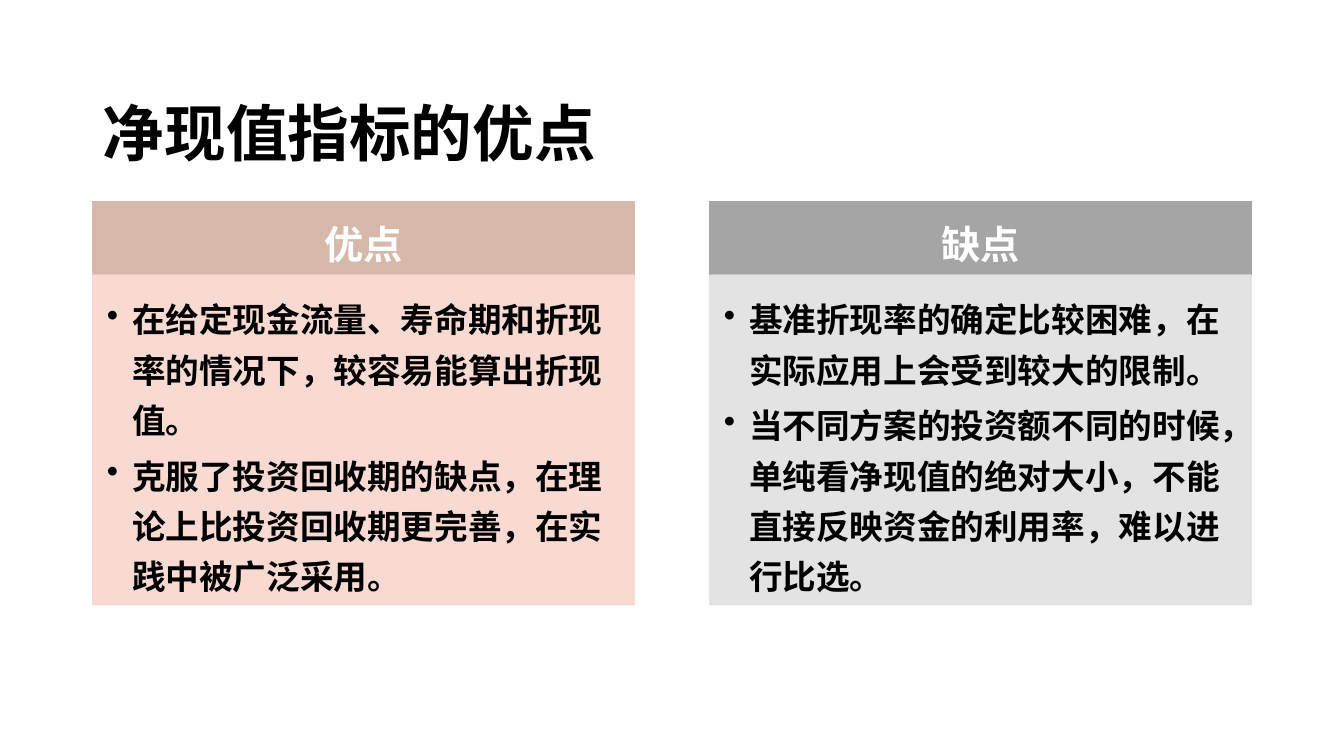
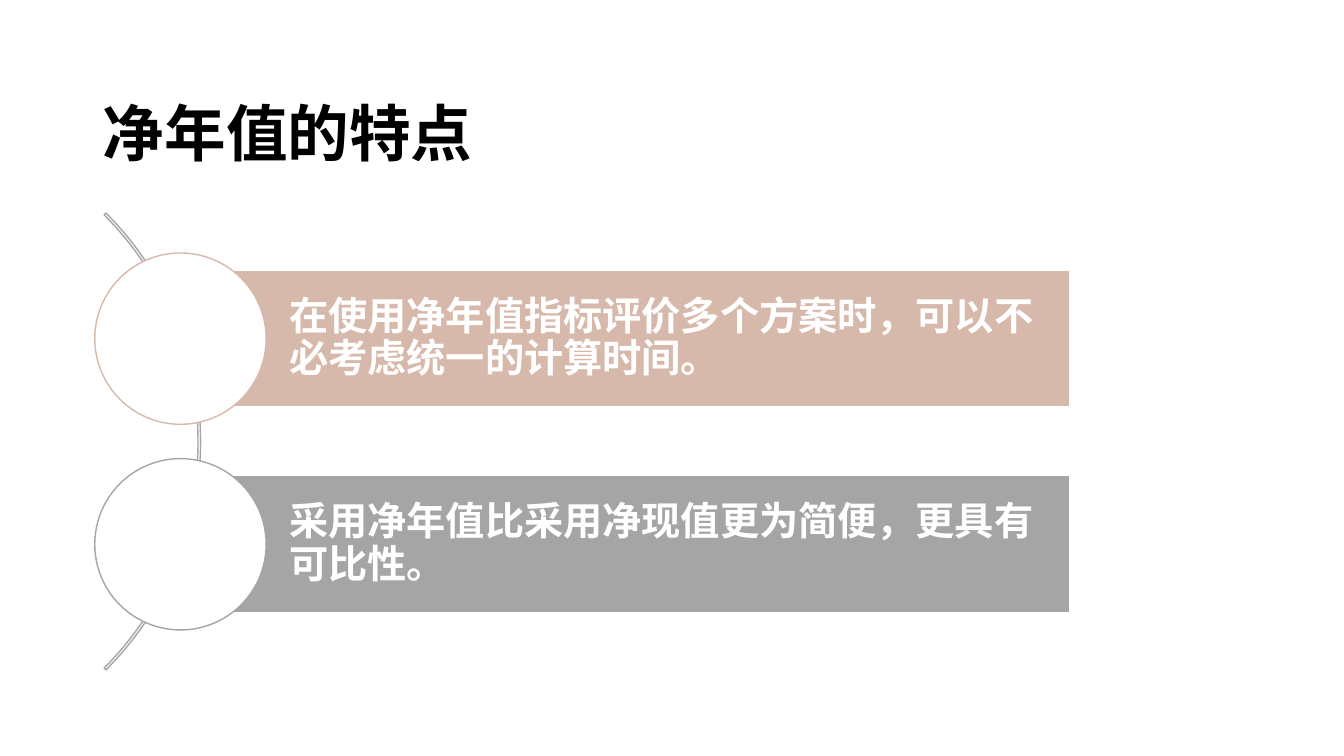
from dataclasses import dataclass

from lxml import etree
from pptx import Presentation
from pptx.dml.color import RGBColor
from pptx.enum.shapes import MSO_SHAPE
from pptx.enum.text import MSO_ANCHOR, MSO_AUTO_SIZE, PP_ALIGN
from pptx.oxml.ns import qn
from pptx.presentation import Presentation as Deck
from pptx.shapes.autoshape import Shape
from pptx.slide import Slide
from pptx.text.text import TextFrame
from pptx.util import Inches, Pt

RECTANGLE, OVAL, ARC = MSO_SHAPE.RECTANGLE, MSO_SHAPE.OVAL, MSO_SHAPE.BLOCK_ARC
TOP, MIDDLE = MSO_ANCHOR.TOP, MSO_ANCHOR.MIDDLE
LEFT, CENTER, JUSTIFY = PP_ALIGN.LEFT, PP_ALIGN.CENTER, PP_ALIGN.JUSTIFY

# Shared style
FONT = "Times New Roman"
BLACK = RGBColor(0x00, 0x00, 0x00)
WHITE = RGBColor(0xFF, 0xFF, 0xFF)
ROSE = RGBColor(0xD7, 0xB9, 0xAB)
PALE_ROSE = RGBColor(0xF8, 0xD7, 0xCE)
GRAY = RGBColor(0xA5, 0xA5, 0xA5)
PALE_GRAY = RGBColor(0xE1, 0xE1, 0xE1)

# Grid in inches: two columns on the comparison, two rows on the list
SLIDE_WIDTH, SLIDE_HEIGHT = 13.33, 7.5
MARGIN = 0.92
TITLE_AREA = (MARGIN, 0.4, SLIDE_WIDTH - 2 * MARGIN, 1.45)
COLUMN_WIDTH, GUTTER = 5.37, 0.75
COLUMN_TOP, HEADER_HEIGHT, BODY_HEIGHT = 2.0, 0.73, 3.27
BAR_LEFT, BAR_WIDTH, BAR_HEIGHT = 1.79, 8.82, 1.36
FIRST_ROW_CENTER, ROW_PITCH = 3.36, 1.5 * BAR_HEIGHT
CIRCLE_SIZE = 1.25 * BAR_HEIGHT
ARC_LEFT, ARC_SIZE = -4.42, 6.41
BULLET_INDENT = 0.25

Area = tuple[float, float, float, float]


@dataclass(frozen=True)
class Column:
    heading: str
    points: tuple[str, ...]
    header_color: RGBColor
    body_color: RGBColor


@dataclass(frozen=True)
class Feature:
    text: str
    color: RGBColor


COLUMNS = (
    Column("优点", (
        "在给定现金流量、寿命期和折现率的情况下，较容易能算出折现值。",
        "克服了投资回收期的缺点，在理论上比投资回收期更完善，在实践中被广泛采用。",
    ), ROSE, PALE_ROSE),
    Column("缺点", (
        "基准折现率的确定比较困难，在实际应用上会受到较大的限制。",
        "当不同方案的投资额不同的时候，单纯看净现值的绝对大小，不能直接反映资金的利用率，难以进行比选。",
    ), GRAY, PALE_GRAY),
)
FEATURES = (
    Feature("在使用净年值指标评价多个方案时，可以不必考虑统一的计算时间。", ROSE),
    Feature("采用净年值比采用净现值更为简便，更具有可比性。", GRAY),
)


def write_text(frame: TextFrame, *texts: str, size: float, color: RGBColor,
               align: PP_ALIGN = LEFT, anchor: MSO_ANCHOR = MIDDLE,
               line_spacing: float = 1.0, space_after: float = 0,
               insets: Area = (0.1, 0.05, 0.1, 0.05), bullet: str = "") -> None:
    """Fill a frame with one bold paragraph per text; space_after is a share of size."""
    frame.word_wrap = True
    frame.auto_size = MSO_AUTO_SIZE.NONE
    frame.vertical_anchor = anchor
    (frame.margin_left, frame.margin_top,
     frame.margin_right, frame.margin_bottom) = map(Inches, insets)
    for index, text in enumerate(texts):
        para = frame.add_paragraph() if index else frame.paragraphs[0]
        para.alignment = align
        para.line_spacing = line_spacing
        para.space_after = Pt(size * space_after)
        span = para.add_run()
        span.text = text
        span.font.name, span.font.size, span.font.bold = FONT, Pt(size), True
        span.font.color.rgb = color
        if bullet:
            properties = para._p.get_or_add_pPr()
            properties.set("marL", str(Inches(BULLET_INDENT)))
            properties.set("indent", str(-Inches(BULLET_INDENT)))
            etree.SubElement(properties, qn("a:buChar")).set("char", bullet)


def add_box(page: Slide, kind: MSO_SHAPE, area: Area, fill: RGBColor | None,
            line: RGBColor, opacity: int = 100) -> Shape:
    """Draw a flat preset shape with a one-point outline; opacity is in percent."""
    box = page.shapes.add_shape(kind, *map(Inches, area))
    box.shadow.inherit = False
    if fill is None:
        box.fill.background()
    else:
        box.fill.solid()
        box.fill.fore_color.rgb = fill
    box.line.color.rgb = line
    box.line.width = Pt(1)
    if opacity < 100:
        for color in box._element.spPr.iter(qn("a:srgbClr")):
            etree.SubElement(color, qn("a:alpha")).set("val", str(opacity * 1000))
    return box


def add_page(deck: Deck, heading: str) -> Slide:
    """Add a title-only page with the shared title style."""
    page = deck.slides.add_slide(deck.slide_layouts[5])
    title = page.shapes.title
    title.left, title.top, title.width, title.height = map(Inches, TITLE_AREA)
    write_text(title.text_frame, heading, size=44, color=BLACK,
               align=JUSTIFY, line_spacing=1.5)
    return page


def add_column(page: Slide, index: int, column: Column) -> None:
    left = MARGIN + index * (COLUMN_WIDTH + GUTTER)
    header = add_box(page, RECTANGLE, (left, COLUMN_TOP, COLUMN_WIDTH, HEADER_HEIGHT),
                     column.header_color, column.header_color)
    write_text(header.text_frame, column.heading, size=28, color=WHITE, align=CENTER,
               line_spacing=1.25, space_after=0.35, insets=(0.22, 0.12, 0.22, 0.12))
    body_area = (left, COLUMN_TOP + HEADER_HEIGHT, COLUMN_WIDTH, BODY_HEIGHT)
    body = add_box(page, RECTANGLE, body_area, column.body_color,
                   column.body_color, opacity=90)
    write_text(body.text_frame, *column.points, size=24, color=BLACK, anchor=TOP,
               line_spacing=1.25, space_after=0.15,
               insets=(0.14, 0.14, 0.19, 0.21), bullet="•")


def add_arc(page: Slide) -> None:
    """Draw the thin arc from 315 to 45 degrees, centred on the rows."""
    center = FIRST_ROW_CENTER + ROW_PITCH * (len(FEATURES) - 1) / 2
    arc = add_box(page, ARC, (ARC_LEFT, center - ARC_SIZE / 2, ARC_SIZE, ARC_SIZE),
                  None, GRAY)
    for index, value in enumerate((189, 27, 0.004)):
        arc.adjustments[index] = value


def add_feature(page: Slide, index: int, feature: Feature) -> None:
    center = FIRST_ROW_CENTER + index * ROW_PITCH
    bar = add_box(page, RECTANGLE,
                  (BAR_LEFT, center - BAR_HEIGHT / 2, BAR_WIDTH, BAR_HEIGHT),
                  feature.color, WHITE)
    write_text(bar.text_frame, feature.text, size=28, color=WHITE, line_spacing=0.9,
               space_after=0.35, insets=(1.08, 0.08, 0.08, 0.08))
    radius = CIRCLE_SIZE / 2
    add_box(page, OVAL, (BAR_LEFT - radius, center - radius, CIRCLE_SIZE, CIRCLE_SIZE),
            WHITE, feature.color)


def main() -> None:
    deck = Presentation()
    deck.slide_width, deck.slide_height = Inches(SLIDE_WIDTH), Inches(SLIDE_HEIGHT)

    # Comparison in two columns
    page = add_page(deck, "净现值指标的优点")
    for index, column in enumerate(COLUMNS):
        add_column(page, index, column)

    # Features along an arc
    page = add_page(deck, "净年值的特点")
    add_arc(page)
    for index, feature in enumerate(FEATURES):
        add_feature(page, index, feature)

    deck.save("out.pptx")


if __name__ == "__main__":
    main()
